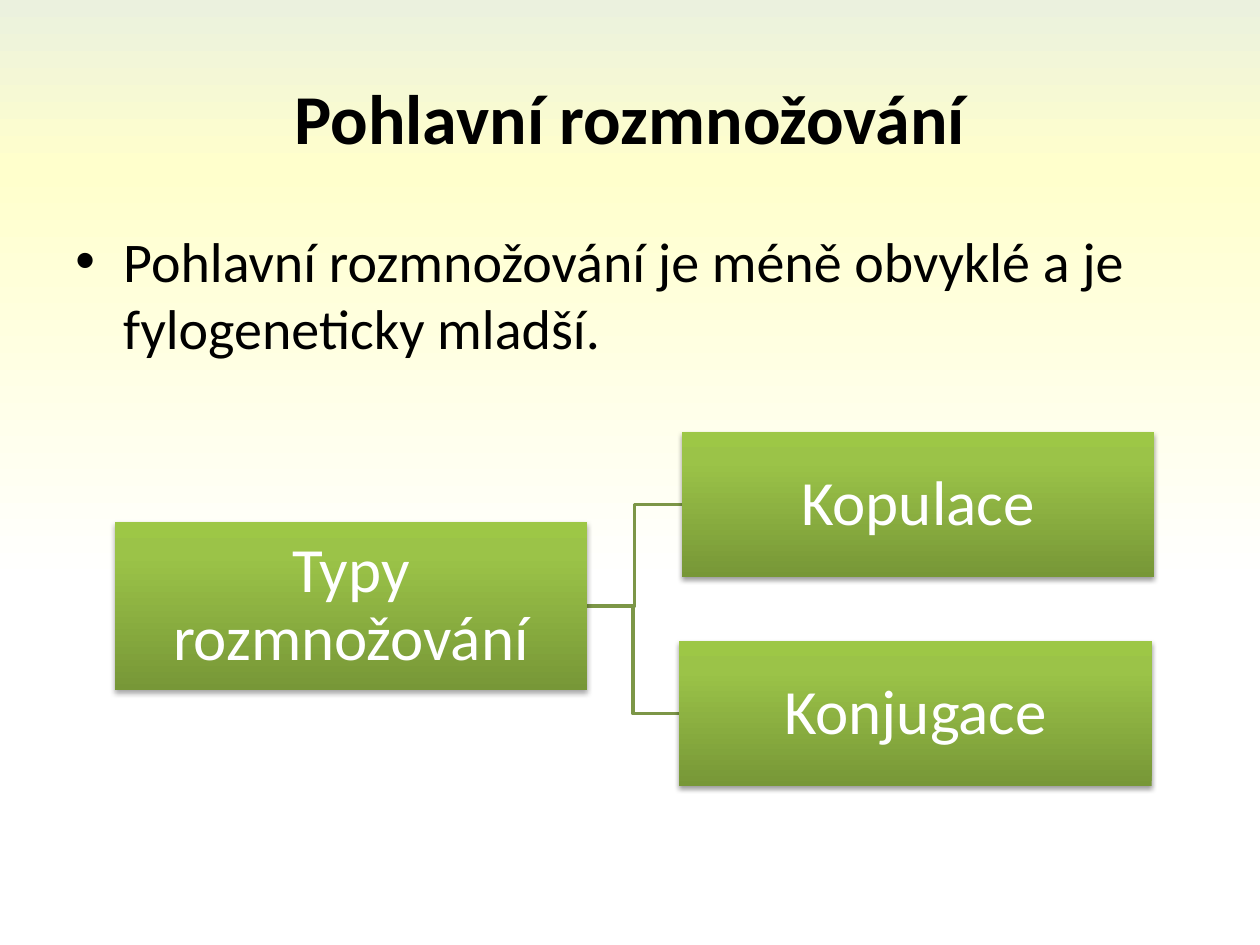
import pptx
import pptx.util
import pptx.dml.color
import pptx.enum.shapes
import pptx.enum.text
import pptx.oxml
from pptx.oxml.ns import qn, nsdecls

Inches, Pt = pptx.util.Inches, pptx.util.Pt
ALIGN, ANCHOR = pptx.enum.text.PP_ALIGN, pptx.enum.text.MSO_ANCHOR

# Content
TITLE = "Pohlavní rozmnožování"
BODY = "Pohlavní rozmnožování je méně obvyklé a je fylogeneticky mladší."
# text, (left, top, width, height), shadow opacity %, shadow distance
ROOT = ("Typy rozmnožování", (0.91, 4.14, 3.75, 1.34), 35, 1.8)
BRANCHES = [
    ("Konjugace", (5.39, 5.09, 3.75, 1.15), 38, 1.6),
    ("Kopulace", (5.41, 3.43, 3.75, 1.15), 38, 1.6),
]
BACKGROUND = [(0, "EBF1DE"), (18, "FFFFCC"), (62, "FFFFFF")]
GREEN = [(0, "779737"), (80, "9BC348"), (100, "9DC746")]


def color(value):
    return pptx.dml.color.RGBColor.from_string(value)


def set_gradient(fill, owner, stops, angle):
    """Fill with any number of stops; angle is clockwise in degrees."""
    fill.gradient()
    grad = next(owner.iter(qn("a:gradFill")))
    for child in list(grad):
        grad.remove(child)
    gs = "".join(f'<a:gs pos="{pos * 1000}"><a:srgbClr val="{c}"/></a:gs>'
                 for pos, c in stops)
    grad.append(pptx.oxml.parse_xml(f"<a:gsLst {nsdecls('a')}>{gs}</a:gsLst>"))
    grad.append(pptx.oxml.parse_xml(
        f'<a:lin {nsdecls("a")} ang="{angle * 60000}" scaled="0"/>'))


def write(sp, text, size, fill, bold=False, align=ALIGN.CENTER, anchor=ANCHOR.MIDDLE):
    tf = sp.text_frame
    tf.text = text
    tf.word_wrap = True
    tf.vertical_anchor = anchor
    p = tf.paragraphs[0]
    p.alignment = align
    font = p.runs[0].font
    font.name, font.size, font.bold = "Calibri", Pt(size), bold
    font.color.rgb = color(fill)
    return p


def add_box(s, text, place, opacity, distance):
    sp = s.shapes.add_shape(pptx.enum.shapes.MSO_SHAPE.RECTANGLE, *map(Inches, place))
    set_gradient(sp.fill, sp._element, GREEN, 270)
    sp.line.fill.background()
    sp.shadow.inherit = False
    sp._element.spPr.find(qn("a:effectLst")).append(pptx.oxml.parse_xml(
        f'<a:outerShdw {nsdecls("a")} blurRad="{Pt(3.1)}" dist="{Pt(distance)}" '
        f'dir="5400000" rotWithShape="0"><a:srgbClr val="000000">'
        f'<a:alpha val="{opacity * 1000}"/></a:srgbClr></a:outerShdw>'))
    p = write(sp, text, 36, "FFFFFF")
    p.line_spacing = 0.9
    tf = sp.text_frame
    tf.margin_left = tf.margin_right = tf.margin_top = tf.margin_bottom = Inches(0.03)


def add_elbow(s, start, end):
    """Right-angled line that turns halfway between the two boxes."""
    left, top, width, height = start
    x1, y1 = left + width, top + height / 2
    x2, y2 = end[0], end[1] + end[3] / 2
    middle = (x1 + x2) / 2
    points = [(Inches(x), Inches(y))
              for x, y in ((x1, y1), (middle, y1), (middle, y2), (x2, y2))]
    builder = s.shapes.build_freeform(*points[0])
    builder.add_line_segments(points[1:], close=False)
    sp = builder.convert_to_shape()
    sp.fill.background()
    sp.line.color.rgb = color("7C9647")
    sp.line.width = Pt(2)
    sp.shadow.inherit = False


prs = pptx.Presentation()
prs.slide_width, prs.slide_height = Inches(10), Inches(7.5)
s = prs.slides.add_slide(prs.slide_layouts[6])
set_gradient(s.background.fill, s._element, BACKGROUND, 90)

# Title
sp = s.shapes.add_textbox(Inches(0.5), Inches(0.3), Inches(9), Inches(1.25))
write(sp, TITLE, 40, "000000", bold=True)

# Bulleted sentence
sp = s.shapes.add_textbox(Inches(0.5), Inches(1.75), Inches(9), Inches(4.95))
p = write(sp, BODY, 32, "000000", align=ALIGN.LEFT, anchor=ANCHOR.TOP)
p.space_before = Pt(6.4)
pPr = p._p.get_or_add_pPr()
pPr.set("marL", str(Inches(0.38)))
pPr.set("indent", str(Inches(-0.38)))
for bullet in ('buFont {} typeface="Arial"', 'buChar {} char="•"'):
    pPr.append(pptx.oxml.parse_xml(f"<a:{bullet.format(nsdecls('a'))}/>"))

# Diagram: lines behind, boxes in front
for branch in BRANCHES:
    add_elbow(s, ROOT[1], branch[1])
for box in [ROOT] + BRANCHES[::-1]:
    add_box(s, *box)

prs.save("out.pptx")
